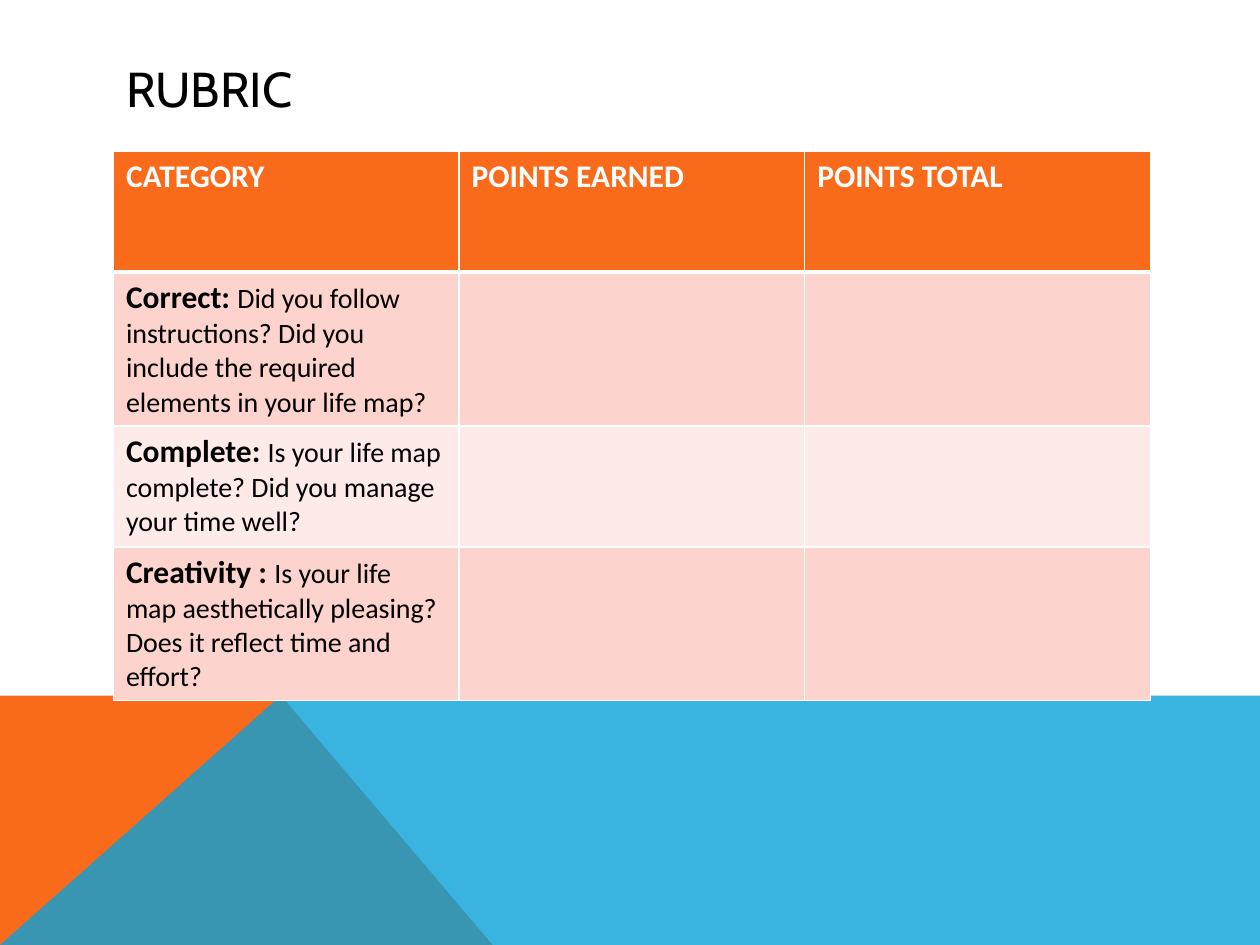
"""Build the life map rubric slide."""
from dataclasses import dataclass

from lxml import etree
from pptx import Presentation
from pptx.dml.color import RGBColor
from pptx.enum.text import MSO_ANCHOR, MSO_AUTO_SIZE, PP_ALIGN
from pptx.oxml.ns import qn
from pptx.util import Inches, Pt

LEFT = PP_ALIGN.LEFT
MIDDLE = MSO_ANCHOR.MIDDLE
NO_AUTOFIT = MSO_AUTO_SIZE.NONE
TITLE_ONLY = 5

HEADERS = ["CATEGORY", "POINTS EARNED", "POINTS TOTAL"]
CRITERIA = [
    ("Correct: ", "Did you follow instructions? Did you include the required "
                  "elements in your life map?"),
    ("Complete: ", "Is your life map complete? Did you manage your time well?"),
    ("Creativity : ", "Is your life map aesthetically pleasing? Does it "
                      "reflect time and effort?"),
]


@dataclass(frozen=True)
class Theme:
    """Colours, fonts and type sizes of the slide."""
    orange: str = "F96A1B"
    blue: str = "08A1D9"
    bands: tuple = ("FDD4CD", "FEEBE8")
    white: str = "FFFFFF"
    black: str = "000000"
    title_font: str = "Cabin"
    body_font: str = "Calibri"
    title_size: int = 28
    label_size: int = 18
    body_size: int = 16


def add_text(p, text, *, font, size, color, bold=False):
    """Append a formatted run to a paragraph."""
    r = p.add_run()
    r.text = text
    r.font.name = font
    r.font.size = Pt(size)
    r.font.bold = bold
    r.font.color.rgb = RGBColor.from_string(color)


class SlideBuilder:
    """Hold the theme and the current slide, and draw elements on it."""

    def __init__(self, slide, theme):
        self.s = slide
        self.theme = theme

    def polygon(self, points, color, opacity=100):
        """Draw a filled outline through points given in inches."""
        start, *rest = [(Inches(x), Inches(y)) for x, y in points]
        fb = self.s.shapes.build_freeform(*start)
        fb.add_line_segments(rest, close=True)
        sp = fb.convert_to_shape()
        sp.shadow.inherit = False
        sp.line.fill.background()
        sp.fill.solid()
        sp.fill.fore_color.rgb = RGBColor.from_string(color)
        if opacity < 100:
            clr = sp.fill._xPr.find(qn("a:solidFill"))[0]
            etree.SubElement(clr, qn("a:alpha"), val=str(opacity * 1000))

    def title(self, text, left, top, width, height):
        """Place and format the title placeholder."""
        sp = self.s.shapes.title
        sp.left, sp.top = Inches(left), Inches(top)
        sp.width, sp.height = Inches(width), Inches(height)
        tf = sp.text_frame
        tf.auto_size = NO_AUTOFIT
        tf.vertical_anchor = MIDDLE
        p = tf.paragraphs[0]
        p.alignment = LEFT
        t = self.theme
        add_text(p, text, font=t.title_font, size=t.title_size, color=t.black)

    def borders(self, cell, **widths):
        """Set white cell borders, with widths in points by side."""
        tc_pr = cell._tc.get_or_add_tcPr()
        for i, (side, width) in enumerate(widths.items()):
            ln = etree.Element(qn(f"a:ln{side}"), w=str(Pt(width)))
            fill = etree.SubElement(ln, qn("a:solidFill"))
            etree.SubElement(fill, qn("a:srgbClr"), val=self.theme.white)
            tc_pr.insert(i, ln)

    def rubric(self, headers, criteria, left, top, width, row_height):
        """Draw the rubric with a header row and banded criteria."""
        t = self.theme
        n_rows = len(criteria) + 1
        table = self.s.shapes.add_table(
            n_rows, len(headers), Inches(left), Inches(top),
            Inches(width), Inches(row_height * n_rows)).table
        for i in range(n_rows):
            fill = t.bands[(i - 1) % 2] if i else t.orange
            for j in range(len(headers)):
                cell = table.cell(i, j)
                cell.fill.solid()
                cell.fill.fore_color.rgb = RGBColor.from_string(fill)
                self.borders(cell, L=1, R=1, T=3 if i == 1 else 1,
                             B=1 if i else 3)
        for j, header in enumerate(headers):
            add_text(table.cell(0, j).text_frame.paragraphs[0], header,
                     font=t.body_font, size=t.label_size, color=t.white,
                     bold=True)
        for i, (label, question) in enumerate(criteria, 1):
            p = table.cell(i, 0).text_frame.paragraphs[0]
            add_text(p, label, font=t.body_font, size=t.label_size,
                     color=t.black, bold=True)
            add_text(p, question, font=t.body_font, size=t.body_size,
                     color=t.black)


def main():
    """Build and save the slide."""
    prs = Presentation()
    prs.slide_width, prs.slide_height = Inches(10), Inches(7.5)
    theme = Theme()
    s = SlideBuilder(prs.slides.add_slide(prs.slide_layouts[TITLE_ONLY]), theme)
    s.polygon([(0, 7.5), (0, 5.52), (2.23, 5.52), (3.91, 7.5)], theme.orange)
    s.polygon([(0, 7.5), (2.23, 5.52), (10, 5.52), (10, 7.5)], theme.blue,
              opacity=80)
    s.title("RUBRIC", 0.9, 0.4, 8.22, 0.6)
    s.rubric(HEADERS, CRITERIA, 0.9, 1.2, 8.23, 0.96)
    prs.save("out.pptx")


if __name__ == "__main__":
    main()
